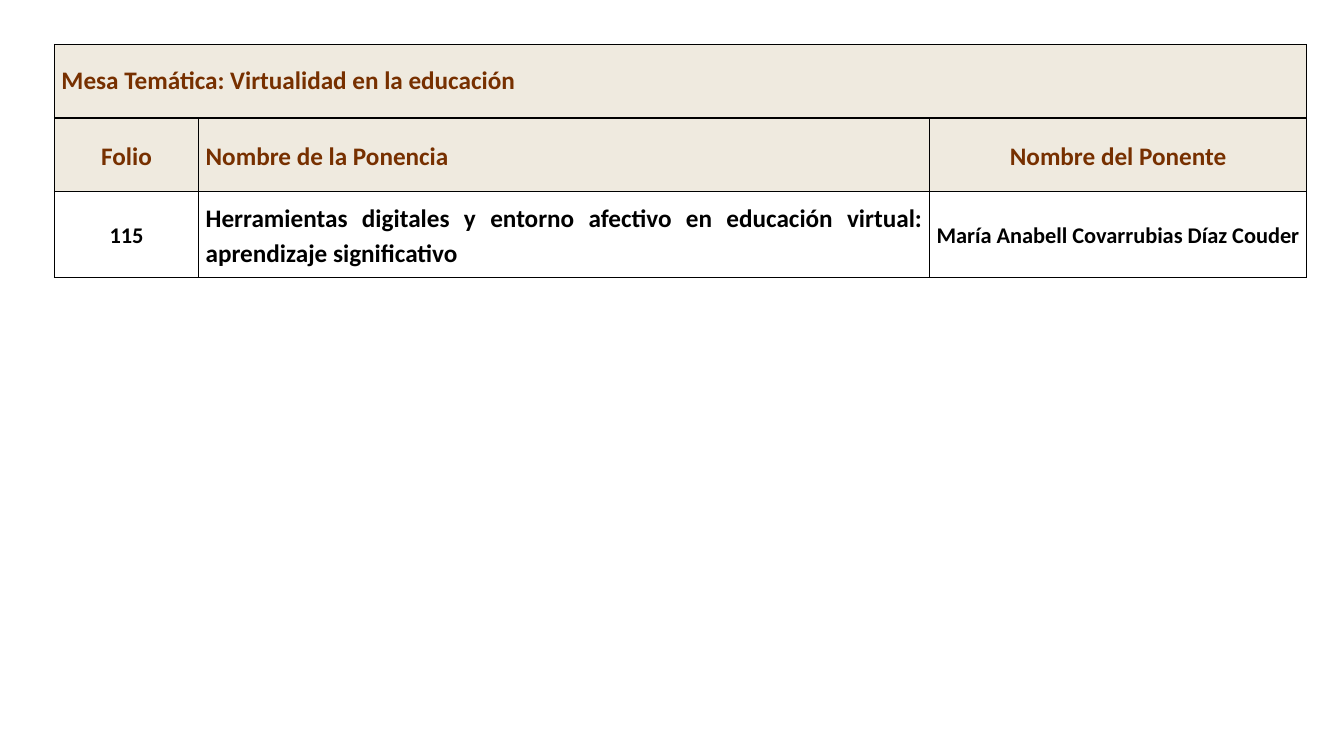
from dataclasses import dataclass
from typing import Optional

from lxml import etree
from pptx import Presentation, table as tbl
from pptx import util as u
from pptx.dml.color import RGBColor
from pptx.enum import text
from pptx.oxml import ns

BROWN = RGBColor(0x77, 0x30, 0x00)
BLACK = RGBColor(0x00, 0x00, 0x00)
BEIGE = RGBColor(0xEF, 0xEA, 0xDF)

CENTER = text.PP_ALIGN.CENTER
JUSTIFY = text.PP_ALIGN.JUSTIFY

COLUMN_WIDTHS = (1.43, 7.25, 3.74)
ROW_HEIGHTS = (0.73, 0.73, 0.85)


@dataclass
class Entry:
    row: int
    column: int
    wording: str
    align: text.PP_ALIGN
    spacing: float
    size: int = 18
    color: RGBColor = BROWN
    fill: Optional[RGBColor] = BEIGE


ENTRIES = (
    Entry(0, 0, "Mesa Temática: Virtualidad en la educación", JUSTIFY, 1.0),
    Entry(1, 0, "Folio", CENTER, 1.15),
    Entry(1, 1, "Nombre de la Ponencia", JUSTIFY, 1.15),
    Entry(1, 2, "Nombre del Ponente", CENTER, 1.15),
    Entry(2, 0, "115", CENTER, 1.14, 16, BLACK, None),
    Entry(2, 1, "Herramientas digitales y entorno afectivo en educación virtual: "
                "aprendizaje significativo", JUSTIFY, 1.14, 18, BLACK, None),
    Entry(2, 2, "María Anabell Covarrubias Díaz Couder", CENTER, 1.14, 16, BLACK, None),
)


def add_borders(cell: tbl._Cell) -> None:
    properties = cell._tc.get_or_add_tcPr()
    for side in ("a:lnL", "a:lnR", "a:lnT", "a:lnB"):
        border = etree.SubElement(properties, ns.qn(side), w=str(u.Pt(1)))
        solid = etree.SubElement(border, ns.qn("a:solidFill"))
        etree.SubElement(solid, ns.qn("a:srgbClr"), val=str(BLACK))


def write_entry(program: tbl.Table, entry: Entry) -> None:
    cell = program.cell(entry.row, entry.column)
    cell.vertical_anchor = text.MSO_ANCHOR.MIDDLE
    cell.margin_left = cell.margin_right = u.Inches(0.07)
    cell.margin_top = cell.margin_bottom = 0
    if entry.fill is None:
        cell.fill.background()
    else:
        cell.fill.solid()
        cell.fill.fore_color.rgb = entry.fill

    paragraph = cell.text_frame.paragraphs[0]
    paragraph.alignment = entry.align
    paragraph.line_spacing = entry.spacing
    run = paragraph.add_run()
    run.text = entry.wording
    run.font.name = "Calibri"
    run.font.size = u.Pt(entry.size)
    run.font.bold = True
    run.font.color.rgb = entry.color


def main() -> None:
    deck = Presentation()
    deck.slide_width, deck.slide_height = u.Inches(13.33), u.Inches(7.5)
    slide = deck.slides.add_slide(deck.slide_layouts[6])

    # Table grid
    program = slide.shapes.add_table(
        len(ROW_HEIGHTS), len(COLUMN_WIDTHS), u.Inches(0.54), u.Inches(0.44),
        u.Inches(sum(COLUMN_WIDTHS)), u.Inches(sum(ROW_HEIGHTS))).table
    program.first_row = program.horz_banding = False
    for column, width in zip(program.columns, COLUMN_WIDTHS):
        column.width = u.Inches(width)
    for row, height in zip(program.rows, ROW_HEIGHTS):
        row.height = u.Inches(height)
    for cell in program.iter_cells():
        add_borders(cell)

    # Heading across all columns, then the wording
    program.cell(0, 0).merge(program.cell(0, len(COLUMN_WIDTHS) - 1))
    for entry in ENTRIES:
        write_entry(program, entry)

    deck.save("out.pptx")


if __name__ == "__main__":
    main()
